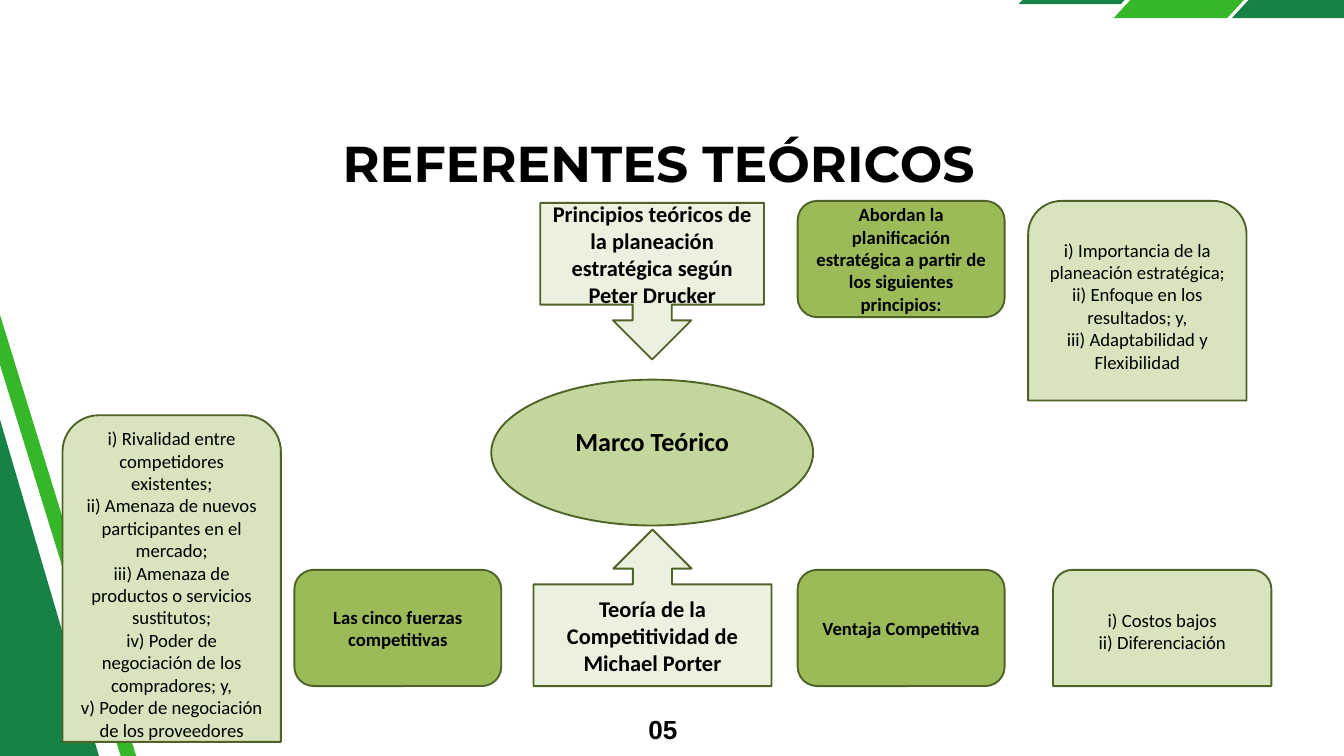
from typing import NamedTuple

from pptx import Presentation
from pptx import util as u
from pptx.dml.color import RGBColor
from pptx.enum import shapes, text

# Page grid: one column and one row are one inch each
COLUMNS, ROWS = 20, 11.25
CELL = u.Inches(1)

# Colours
BLACK = RGBColor(0x00, 0x00, 0x00)
DARK_GREEN = RGBColor(0x16, 0x82, 0x46)
BRIGHT_GREEN = RGBColor(0x35, 0xB7, 0x29)
OUTLINE = RGBColor(0x4F, 0x62, 0x28)
CENTRE_FILL = RGBColor(0xC3, 0xD6, 0x9B)
THEORY_FILL = RGBColor(0xEB, 0xF1, 0xDE)
TOPIC_FILL = RGBColor(0x9B, 0xBB, 0x59)
DETAIL_FILL = RGBColor(0xD7, 0xE4, 0xBD)

KIND = shapes.MSO_SHAPE
ALIGN = text.PP_ALIGN


class Style(NamedTuple):
    kind: KIND
    fill: RGBColor
    size: int
    bold: bool = True


class Node(NamedTuple):
    style: Style
    column: float
    row: float
    width: float
    height: float
    lines: list[str]
    lift: float = 0.05  # bottom inset, in rows


class Ribbon(NamedTuple):
    color: RGBColor
    points: list[tuple[float, float]]


CENTRE = Style(KIND.OVAL, CENTRE_FILL, 28)
THEORY_DOWN = Style(KIND.DOWN_ARROW_CALLOUT, THEORY_FILL, 24)
THEORY_UP = Style(KIND.UP_ARROW_CALLOUT, THEORY_FILL, 24)
TOPIC = Style(KIND.ROUNDED_RECTANGLE, TOPIC_FILL, 20)
DETAIL = Style(KIND.ROUND_2_SAME_RECTANGLE, DETAIL_FILL, 20, bold=False)

TOP, BOTTOM = 2.99, 8.48
TOPIC_SIZE = (3.08, 1.73)
DETAIL_WIDTH = 3.25


def slanted(color: RGBColor, left: float, top: float, bottom: float,
            width: float, shift: float) -> Ribbon:
    """A parallelogram whose top edge is shifted to the right."""
    return Ribbon(color, [(left + shift, top), (left + shift + width, top),
                          (left + width, bottom), (left, bottom)])


RIBBONS = [
    slanted(DARK_GREEN, 15.16, -0.86, 0.06, 1.52, 0.85),
    slanted(BRIGHT_GREEN, 16.57, -1.06, 0.27, 1.69, 1.23),
    slanted(DARK_GREEN, 18.33, -1.06, 0.27, 1.69, 1.23),
    Ribbon(DARK_GREEN, [(-1.97, 17.32), (-6.6, 1.57), (-1.79, 0.16), (2.84, 15.9)]),
    Ribbon(BRIGHT_GREEN, [(3.44, 16.58), (-1.4, 0.89), (-1.19, 0.83), (3.65, 16.51)]),
]

NODES = [
    Node(CENTRE, 7.31, 5.65, 4.79, 2.17, ["Marco Teórico"], lift=0.39),
    Node(THEORY_DOWN, 8.04, 3.02, 3.33, 2.33,
         ["Principios teóricos de la planeación estratégica según Peter Drucker"]),
    Node(THEORY_UP, 7.94, 7.88, 3.54, 2.33,
         ["Teoría de la Competitividad de Michael Porter"]),
    Node(TOPIC, 4.38, BOTTOM, *TOPIC_SIZE, ["Las cinco fuerzas competitivas"]),
    Node(TOPIC, 11.87, BOTTOM, *TOPIC_SIZE, ["Ventaja Competitiva"]),
    Node(TOPIC, 11.87, TOP, *TOPIC_SIZE,
         ["Abordan la planificación estratégica a partir de los siguientes principios:"]),
    Node(DETAIL, 15.67, BOTTOM, DETAIL_WIDTH, 1.73,
         ["i) Costos bajos", "ii) Diferenciación"]),
    Node(DETAIL, 0.93, 6.18, DETAIL_WIDTH, 4.86,
         ["i) Rivalidad entre competidores existentes;",
          "ii) Amenaza de nuevos participantes en el mercado;",
          "iii) Amenaza de productos o servicios sustitutos;",
          "iv) Poder de negociación de los compradores; y,",
          "v) Poder de negociación de los proveedores"]),
    Node(DETAIL, 15.3, TOP, DETAIL_WIDTH, 2.97,
         ["i) Importancia de la planeación estratégica;",
          "ii) Enfoque en los resultados; y,",
          "iii) Adaptabilidad y Flexibilidad"]),
]


def cells(*counts: float) -> list[u.Emu]:
    return [u.Emu(round(count * CELL)) for count in counts]


def write(shape, lines: list[str], *, size: int, font: str = "Calibri",
          bold: bool = True, align: ALIGN = ALIGN.CENTER,
          anchor=text.MSO_ANCHOR.MIDDLE, insets=(0.1, 0.05, 0.1, 0.05),
          spacing=None) -> None:
    frame = shape.text_frame
    frame.word_wrap = True
    frame.auto_size = text.MSO_AUTO_SIZE.NONE
    frame.vertical_anchor = anchor
    (frame.margin_left, frame.margin_top,
     frame.margin_right, frame.margin_bottom) = cells(*insets)
    for index, line in enumerate(lines):
        para = frame.paragraphs[0] if index == 0 else frame.add_paragraph()
        para.alignment = align
        if spacing is not None:
            para.line_spacing = spacing
        span = para.add_run()
        span.text = line
        span.font.name = font
        span.font.size = u.Pt(size)
        span.font.bold = bold
        span.font.color.rgb = BLACK


def draw_ribbon(page, ribbon: Ribbon) -> None:
    start, *others = [cells(*point) for point in ribbon.points]
    builder = page.shapes.build_freeform(*start)
    builder.add_line_segments(others, close=True)
    shape = builder.convert_to_shape()
    shape.shadow.inherit = False
    shape.fill.solid()
    shape.fill.fore_color.rgb = ribbon.color
    shape.line.fill.background()


def draw_node(page, node: Node) -> None:
    style = node.style
    box = page.shapes.add_shape(
        style.kind, *cells(node.column, node.row, node.width, node.height))
    box.shadow.inherit = False
    box.fill.solid()
    box.fill.fore_color.rgb = style.fill
    box.line.color.rgb = OUTLINE
    box.line.width = u.Pt(2)
    write(box, node.lines, size=style.size, bold=style.bold,
          insets=(0.1, 0.05, 0.1, node.lift))


def main() -> None:
    deck = Presentation()
    deck.slide_width, deck.slide_height = cells(COLUMNS, ROWS)
    page = deck.slides.add_slide(deck.slide_layouts[5])

    # Corner decoration
    for ribbon in RIBBONS:
        draw_ribbon(page, ribbon)

    # Title and page number
    plain = {"anchor": text.MSO_ANCHOR.TOP, "insets": (0, 0, 0, 0)}
    title = page.shapes.title
    title.left, title.top, title.width, title.height = cells(2.92, 1.96, 13.76, 0.91)
    write(title, ["REFERENTES TEÓRICOS"], size=54, font="Montserrat", **plain)
    number = page.shapes.add_textbox(*cells(9.52, 10.54, 0.56, 0.5))
    write(number, ["05"], size=28, font="Arial", align=ALIGN.RIGHT,
          spacing=u.Pt(39.2), **plain)

    # Concept map
    for node in NODES:
        draw_node(page, node)

    deck.save("out.pptx")


if __name__ == "__main__":
    main()
